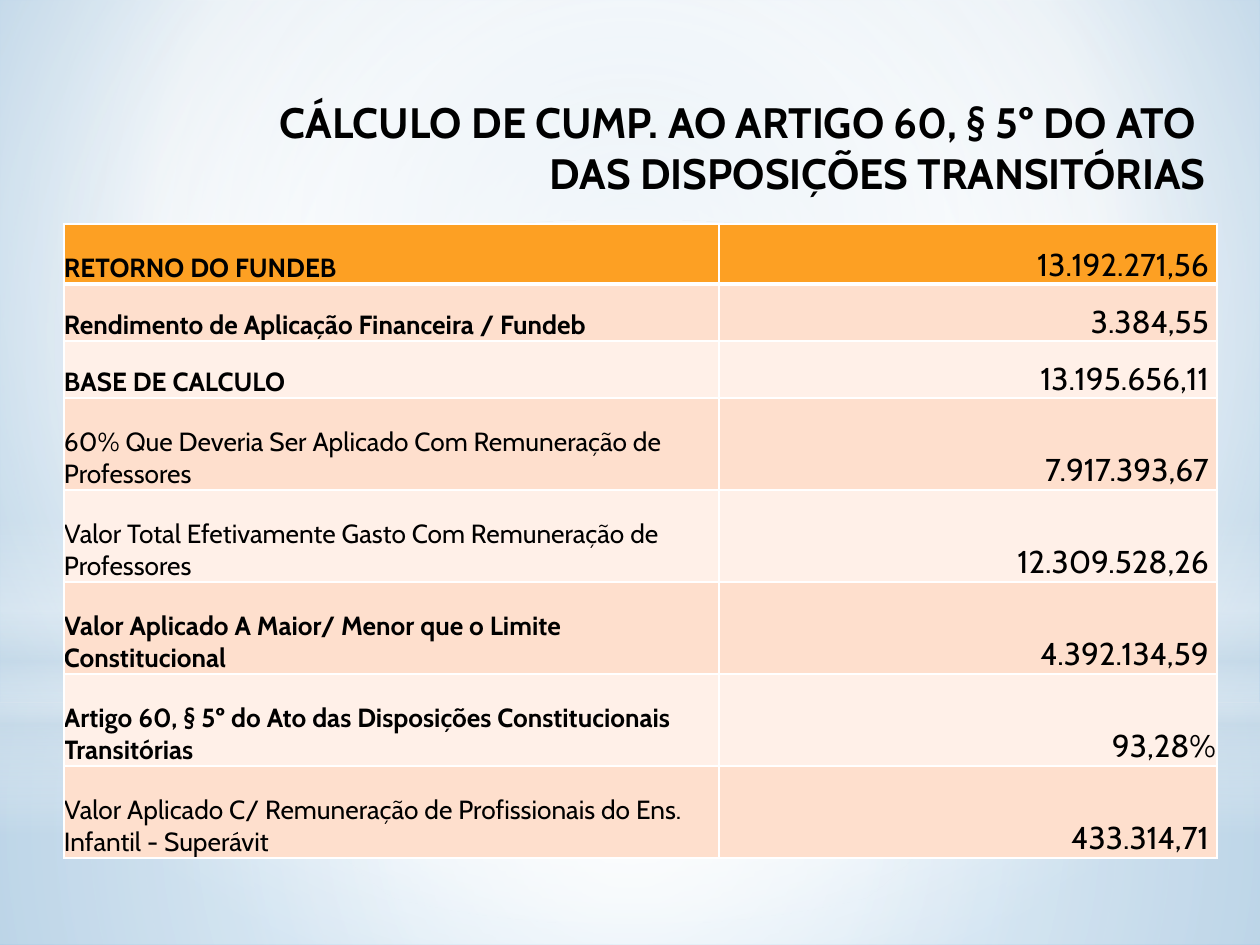
from dataclasses import dataclass
from typing import Optional

from lxml import etree
from pptx import Presentation
from pptx import util as u
from pptx.dml.color import RGBColor
from pptx.enum import shapes, text
from pptx.oxml.ns import qn

EMU_PER_PX = 914400 / 126


def px(length: int) -> u.Emu:
    return u.Emu(round(length * EMU_PER_PX))


@dataclass(frozen=True)
class Theme:
    font: str = "Cabin"
    ink: str = "000000"
    white: str = "FFFFFF"
    haze: str = "CCDDEA"
    sky_center: str = "BCD5E8"
    sky_edge: str = "82B6DE"
    header: str = "FDA023"
    bands: tuple = ("FEDFCD", "FFF0E8")
    title_size: float = 24.3
    label_size: float = 15
    value_size: float = 18
    border: float = 1
    header_border: float = 3


THEME = Theme()


@dataclass(frozen=True)
class Stop:
    position: int
    color: str
    alpha: int = 100


@dataclass(frozen=True)
class Gradient:
    stops: tuple
    focus: Optional[tuple] = (50, 50, 50, 50)  # None means top to bottom


@dataclass(frozen=True)
class Layer:
    top: int
    height: int
    gradient: Gradient
    kind: shapes.MSO_SHAPE = shapes.MSO_SHAPE.RECTANGLE


@dataclass(frozen=True)
class Entry:
    label: str
    value: str
    height: int
    bold: bool = False


SKY = Gradient((Stop(0, THEME.sky_center), Stop(60, THEME.white),
                Stop(100, THEME.sky_edge)), (20, 10, 20, 60))
LAYERS = (
    Layer(703, 242, Gradient((Stop(0, THEME.white, 91), Stop(37, THEME.white, 76),
                              Stop(100, THEME.haze, 79)))),
    Layer(0, 703, Gradient((Stop(0, THEME.white, 89), Stop(48, THEME.white, 62),
                            Stop(100, THEME.haze, 79)))),
    Layer(519, 315, Gradient((Stop(0, THEME.white, 0), Stop(29, THEME.white, 30),
                              Stop(45, THEME.haze, 40), Stop(55, THEME.white, 26),
                              Stop(65, THEME.haze, 60), Stop(100, THEME.white, 0)), None)),
    Layer(220, 703, Gradient((Stop(0, THEME.white), Stop(56, THEME.white, 0))),
          shapes.MSO_SHAPE.OVAL),
)

TITLE = "CÁLCULO DE CUMP. AO ARTIGO 60, § 5º DO ATO \nDAS DISPOSIÇÕES TRANSITÓRIAS"
COLUMNS = (655, 498)
ENTRIES = (
    Entry("RETORNO DO FUNDEB", "13.192.271,56 ", 60, True),
    Entry("Rendimento de Aplicação Financeira / Fundeb", "3.384,55 ", 57, True),
    Entry("BASE DE CALCULO", "13.195.656,11 ", 57, True),
    Entry("60% Que Deveria Ser Aplicado Com Remuneração de Professores",
          "7.917.393,67 ", 92),
    Entry("Valor Total Efetivamente Gasto Com Remuneração de Professores",
          "12.309.528,26 ", 92),
    Entry("Valor Aplicado A Maior/ Menor que o Limite Constitucional",
          "4.392.134,59 ", 92, True),
    Entry("Artigo 60, § 5º do Ato das Disposições Constitucionais Transitórias",
          "93,28%", 92, True),
    Entry("Valor Aplicado C/ Remuneração de Profissionais do Ens. Infantil - Superávit",
          "433.314,71 ", 92),
)


def write(frame, content: str, *, size: float, bold: bool = False,
          align=text.PP_ALIGN.LEFT) -> None:
    frame.word_wrap = True
    paragraph = frame.paragraphs[0]
    paragraph.alignment = align
    for index, line in enumerate(content.split("\n")):
        if index:
            paragraph.add_line_break()
        run = paragraph.add_run()
        run.text = line
        run.font.name = THEME.font
        run.font.size = u.Pt(size)
        run.font.bold = bold
        run.font.color.rgb = RGBColor.from_string(THEME.ink)


def apply_gradient(properties, gradient: Gradient) -> None:
    """Replace the solid fill in a properties element by a gradient."""
    fill = etree.Element(qn("a:gradFill"), rotWithShape="1")
    stop_list = etree.SubElement(fill, qn("a:gsLst"))
    for stop in gradient.stops:
        node = etree.SubElement(stop_list, qn("a:gs"), pos=str(stop.position * 1000))
        color = etree.SubElement(node, qn("a:srgbClr"), val=stop.color)
        if stop.alpha < 100:
            etree.SubElement(color, qn("a:alpha"), val=str(stop.alpha * 1000))
    if gradient.focus is None:
        etree.SubElement(fill, qn("a:lin"), ang="5400000", scaled="0")
    else:
        shade = etree.SubElement(fill, qn("a:path"))
        shade.set("path", "circle")
        sides = {side: str(share * 1000) for side, share in zip("ltrb", gradient.focus)}
        etree.SubElement(shade, qn("a:fillToRect"), sides)
    properties.replace(properties.find(qn("a:solidFill")), fill)


def draw_layer(slide, layer: Layer) -> None:
    shape = slide.shapes.add_shape(layer.kind, 0, px(layer.top), px(1260), px(layer.height))
    shape.shadow.inherit = False
    shape.line.fill.background()
    shape.fill.solid()
    apply_gradient(shape.element.spPr, layer.gradient)


def draw_title(slide) -> None:
    frame = slide.shapes.add_textbox(px(84), px(45), px(1134), px(169)).text_frame
    frame.margin_top = px(51)
    write(frame, TITLE, size=THEME.title_size, bold=True, align=text.PP_ALIGN.RIGHT)


def style_cell(cell, color: str, margin: int, bottom_border: float) -> None:
    cell.vertical_anchor = text.MSO_ANCHOR.BOTTOM
    cell.margin_left = cell.margin_right = cell.margin_top = px(margin)
    cell.margin_bottom = 0
    properties = cell._tc.get_or_add_tcPr()
    for side in "LRTB":
        width = bottom_border if side == "B" else THEME.border
        line = etree.SubElement(properties, qn(f"a:ln{side}"), w=str(u.Pt(width)))
        fill = etree.SubElement(line, qn("a:solidFill"))
        etree.SubElement(fill, qn("a:srgbClr"), val=THEME.white)
    cell.fill.solid()
    cell.fill.fore_color.rgb = RGBColor.from_string(color)


def draw_table(slide) -> None:
    table = slide.shapes.add_table(
        len(ENTRIES), len(COLUMNS), px(64), px(224), px(sum(COLUMNS)),
        px(sum(entry.height for entry in ENTRIES))).table
    for column, width in zip(table.columns, COLUMNS):
        column.width = px(width)
    for index, entry in enumerate(ENTRIES):
        table.rows[index].height = px(entry.height)
        color = THEME.bands[(index - 1) % 2] if index else THEME.header
        bottom = THEME.border if index else THEME.header_border
        label, value = table.cell(index, 0), table.cell(index, 1)
        style_cell(label, color, 0, bottom)
        style_cell(value, color, 1, bottom)
        write(label.text_frame, entry.label, size=THEME.label_size, bold=entry.bold)
        write(value.text_frame, entry.value, size=THEME.value_size,
              align=text.PP_ALIGN.RIGHT)


def main() -> None:
    presentation = Presentation()
    presentation.slide_width, presentation.slide_height = px(1260), px(945)
    slide = presentation.slides.add_slide(presentation.slide_layouts[6])

    # Sky background with translucent haze over it
    slide.background.fill.solid()
    apply_gradient(slide.element.find(".//" + qn("p:bgPr")), SKY)
    for layer in LAYERS:
        draw_layer(slide, layer)

    # Heading and figures
    draw_title(slide)
    draw_table(slide)
    presentation.save("out.pptx")


if __name__ == "__main__":
    main()
